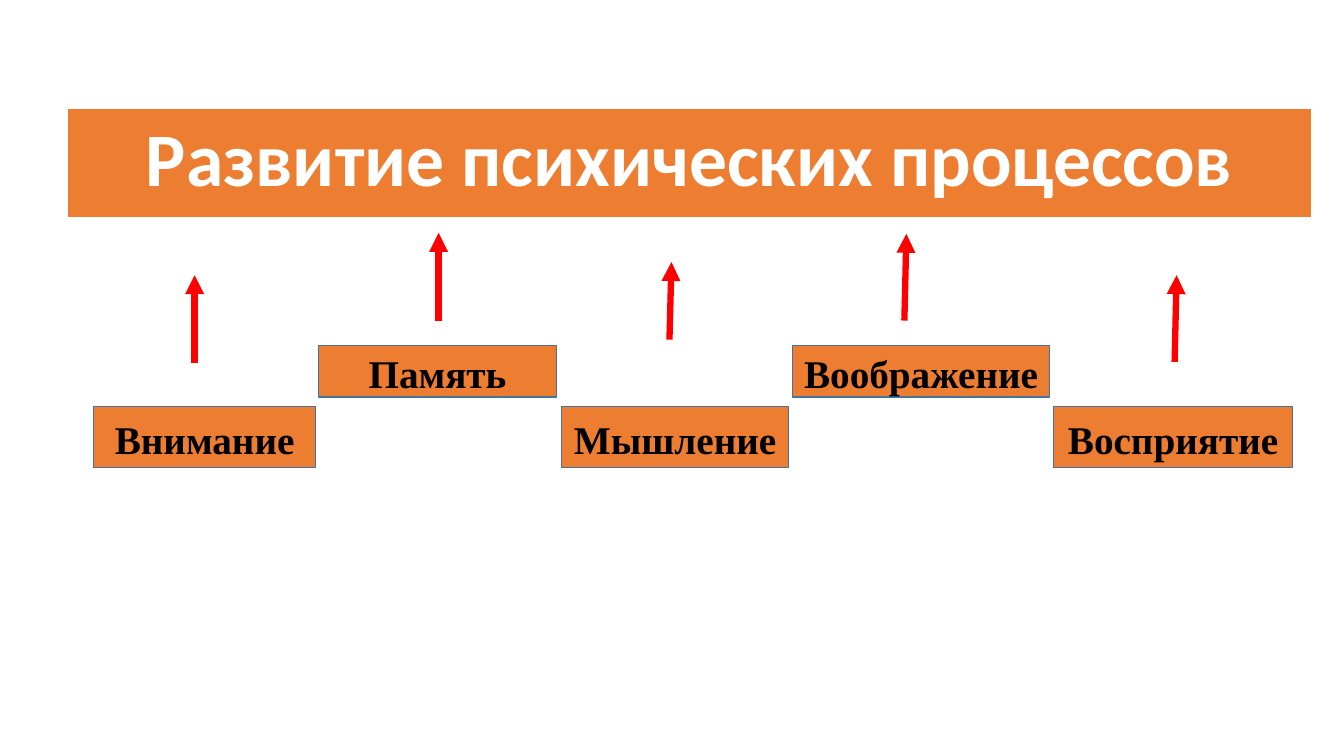
from lxml.etree import SubElement
from pptx import Presentation
from pptx.dml.color import RGBColor
from pptx.enum.shapes import MSO_CONNECTOR, MSO_SHAPE
from pptx.enum.text import MSO_ANCHOR, PP_ALIGN
from pptx.oxml.ns import qn
from pptx.util import Emu, Pt

EMU_PER_PX = 9144
ORANGE, BLUE, RED = "ED7D31", "43739E", "FF0000"
WHITE, BLACK = "FFFFFF", "000000"
UPPER, LOWER = (343, 51), (403, 61)

PROCESSES = [
    ("Внимание", 93, 220, LOWER),
    ("Память", 316, 236, UPPER),
    ("Мышление", 557, 225, LOWER),
    ("Воображение", 786, 255, UPPER),
    ("Восприятие", 1045, 237, LOWER),
]
ARROWS = [
    (193, 360, 193, 273),
    (435, 318, 435, 231),
    (664, 337, 666, 260),
    (897, 318, 899, 232),
    (1165, 359, 1167, 273),
]


def px(*values):
    return [Emu(v * EMU_PER_PX) for v in values]


def paint(fill, color):
    fill.solid()
    fill.fore_color.rgb = RGBColor.from_string(color)


def write(tf, text, font, size, color):
    p = tf.paragraphs[0]
    p.alignment = PP_ALIGN.CENTER
    r = p.add_run()
    r.text = text
    r.font.name = font
    r.font.size = Pt(size)
    r.font.bold = True
    paint(r.font.fill, color)
    return p


def add_banner(s, text, x, y, w, h):
    table = s.shapes.add_table(1, 1, *px(x, y, w, h)).table
    table.first_row = table.horz_banding = False
    cell = table.cell(0, 0)
    tcPr = cell._tc.get_or_add_tcPr()
    for side in ("a:lnL", "a:lnR", "a:lnT", "a:lnB"):
        ln = SubElement(tcPr, qn(side), w=str(Pt(1)))
        SubElement(SubElement(ln, qn("a:solidFill")), qn("a:srgbClr"), val=ORANGE)
    paint(cell.fill, ORANGE)
    write(cell.text_frame, text, "Calibri", 54, WHITE)


def add_process(s, text, x, y, w, h):
    sp = s.shapes.add_shape(MSO_SHAPE.RECTANGLE, *px(x, y, w, h))
    sp.shadow.inherit = False
    paint(sp.fill, ORANGE)
    paint(sp.line.fill, BLUE)
    sp.line.width = Pt(1)
    tf = sp.text_frame
    tf.word_wrap = True
    tf.vertical_anchor = MSO_ANCHOR.MIDDLE
    write(tf, text, "Times New Roman", 28, BLACK).line_spacing = 1.07


def add_arrow(s, x1, y1, x2, y2):
    c = s.shapes.add_connector(MSO_CONNECTOR.STRAIGHT, *px(x1, y1, x2, y2))
    paint(c.line.fill, RED)
    c.line.width = Pt(4.5)
    SubElement(c.line._get_or_add_ln(), qn("a:tailEnd"), type="triangle")
    SubElement(c._element.spPr, qn("a:effectLst"))


def main():
    prs = Presentation()
    prs.slide_width, prs.slide_height = px(1333, 750)
    s = prs.slides.add_slide(prs.slide_layouts[6])
    add_banner(s, "Развитие психических процессов", 68, 109, 1232, 106)
    for arrow in ARROWS:
        add_arrow(s, *arrow)
    for text, x, w, (y, h) in PROCESSES:
        add_process(s, text, x, y, w, h)
    prs.save("out.pptx")


if __name__ == "__main__":
    main()
